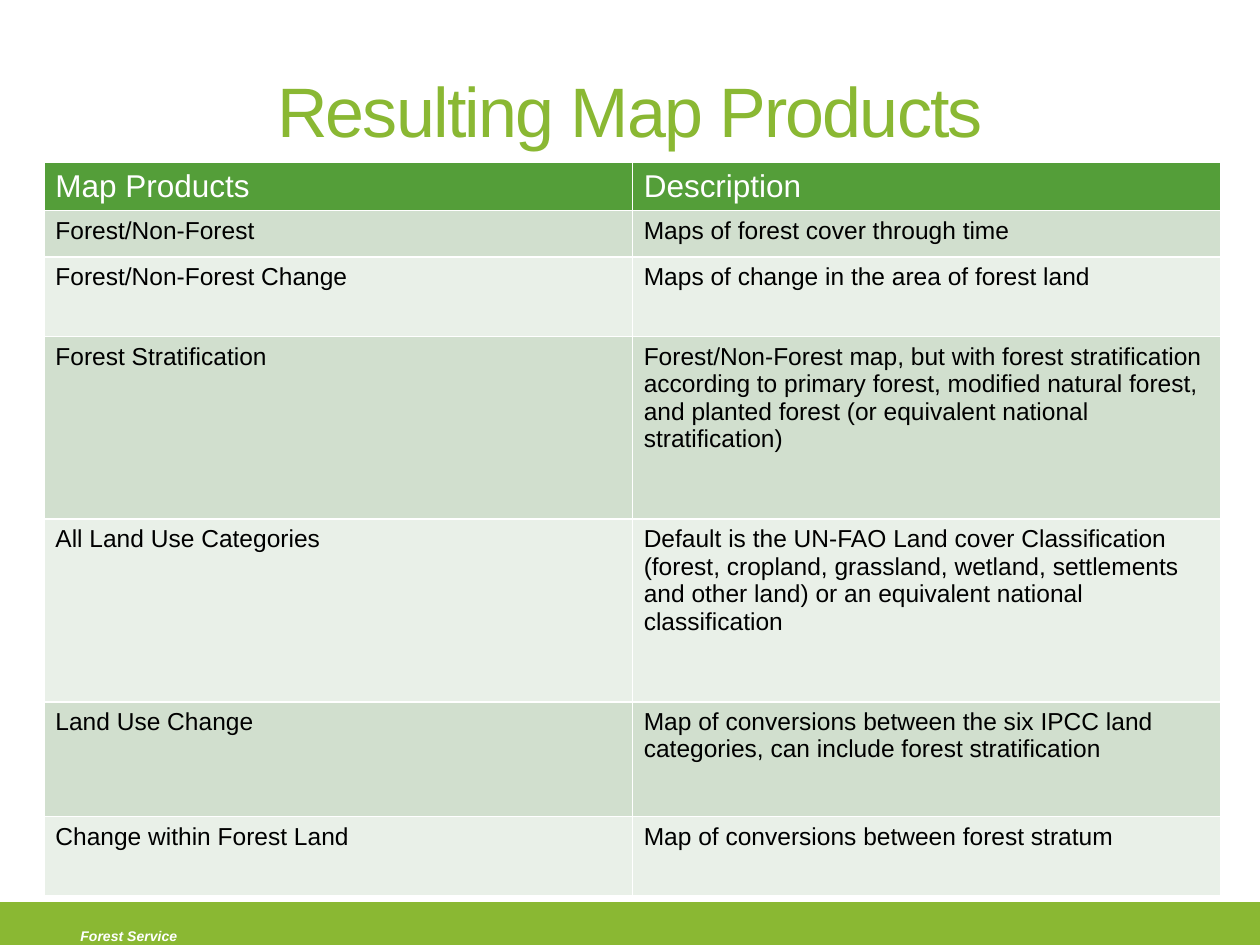
"""Build the slide that lists the resulting map products."""
from typing import NamedTuple

from lxml import etree
from pptx import Presentation
from pptx.dml.color import RGBColor
from pptx.enum import shapes, text
from pptx.oxml import ns
from pptx.util import Inches, Pt

LIME, WHITE, BLACK = "8AB833", "FFFFFF", "000000"
HEAD, BANDS = "549E39", ("D1DFCE", "E9F0E8")


class Row(NamedTuple):
    """One table row: its height in inches, product and description."""
    high: float
    name: str
    desc: str


ROWS = [
    Row(0.37, "Map Products", "Description"),
    Row(0.37, "Forest/Non-Forest", "Maps of forest cover through time"),
    Row(0.63, "Forest/Non-Forest Change",
        "Maps of change in the area of forest land"),
    Row(1.45, "Forest Stratification",
        "Forest/Non-Forest map, but with forest stratification according to "
        "primary forest, modified natural forest, and planted forest "
        "(or equivalent national stratification)"),
    Row(1.45, "All Land Use Categories",
        "Default is the UN-FAO Land cover Classification (forest, cropland, "
        "grassland, wetland, settlements and other land) or an equivalent "
        "national classification"),
    Row(0.91, "Land Use Change",
        "Map of conversions between the six IPCC land categories, "
        "can include forest stratification"),
    Row(0.63, "Change within Forest Land",
        "Map of conversions between forest stratum"),
]


def paint(color, tone: str) -> None:
    """Set a colour from a hex string."""
    color.rgb = RGBColor.from_string(tone)


def fill(item, tone: str) -> None:
    """Give a shape or cell a solid fill."""
    item.fill.solid()
    paint(item.fill.fore_color, tone)


def write(frame, words: str, size: float, tone: str):
    """Put one formatted run in a text frame and return its font."""
    frame.text = words
    font = frame.paragraphs[0].runs[0].font
    font.name, font.size, font.bold = "Arial", Pt(size), False
    paint(font.color, tone)
    return font


def edge(cell) -> None:
    """Draw thin white borders around a cell."""
    props = cell._tc.get_or_add_tcPr()
    for side in ("lnL", "lnR", "lnT", "lnB"):
        line = etree.SubElement(props, ns.qn(f"a:{side}"), w=str(Pt(1)))
        solid = etree.SubElement(line, ns.qn("a:solidFill"))
        etree.SubElement(solid, ns.qn("a:srgbClr"), val=WHITE)


def draw_cell(cell, words: str, size: float, tone: str, back: str) -> None:
    """Format and fill one table cell."""
    cell.margin_left = cell.margin_right = Inches(0.09)
    cell.margin_top, cell.margin_bottom = Inches(0.05), Inches(0.03)
    edge(cell)
    fill(cell, back)
    write(cell.text_frame, words, size, tone)


def draw_table(slide, rows: list[Row]) -> None:
    """Add the table of map products."""
    high = sum(row.high for row in rows)
    table = slide.shapes.add_table(
        len(rows), 2, Inches(0.35), Inches(1.29),
        Inches(9.34), Inches(high)).table
    for i, row in enumerate(rows):
        table.rows[i].height = Inches(row.high)
        look = (14, BLACK, BANDS[(i - 1) % 2]) if i else (18, WHITE, HEAD)
        for j, words in enumerate((row.name, row.desc)):
            draw_cell(table.cell(i, j), words, *look)


def draw_foot(slide) -> None:
    """Add the green strip and its label."""
    strip = slide.shapes.add_shape(
        shapes.MSO_SHAPE.RECTANGLE, 0, Inches(7.17), Inches(10), Inches(0.36))
    strip.shadow.inherit = False
    fill(strip, LIME)
    paint(strip.line.color, LIME)
    strip.line.width = Pt(2.08)
    label = slide.shapes.add_textbox(
        Inches(0.54), Inches(7.31), Inches(2.04), Inches(0.24))
    label.text_frame.word_wrap = True
    font = write(label.text_frame, "Forest Service", 8, WHITE)
    font.bold = font.italic = True


def draw_title(slide) -> None:
    """Place and format the title."""
    title = slide.shapes.title
    title.left, title.top = Inches(0.5), Inches(0.33)
    title.width, title.height = Inches(9), Inches(1.08)
    frame = title.text_frame
    font = write(frame, "Resulting Map Products", 40, LIME)
    font._element.set("spc", "-100")
    frame.vertical_anchor = text.MSO_ANCHOR.MIDDLE
    frame.paragraphs[0].alignment = text.PP_ALIGN.CENTER


def main() -> None:
    """Build and save the slide."""
    deck = Presentation()
    deck.slide_width, deck.slide_height = Inches(10), Inches(7.5)
    slide = deck.slides.add_slide(deck.slide_layouts[5])
    draw_foot(slide)
    draw_title(slide)
    draw_table(slide, ROWS)
    deck.save("out.pptx")


if __name__ == "__main__":
    main()
